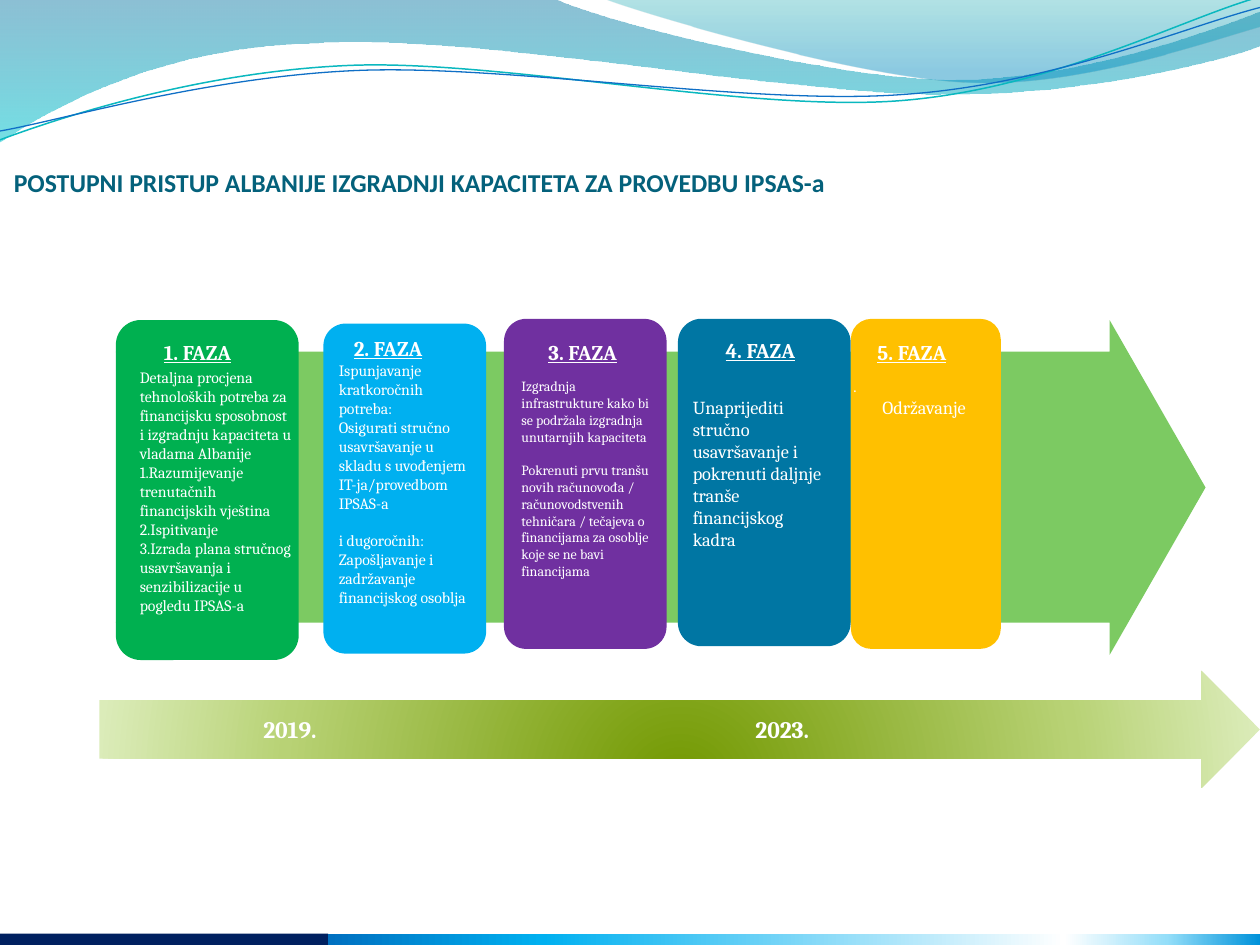
from math import cos, radians, sin

from lxml import etree
from pptx import Presentation
from pptx.dml.color import RGBColor
from pptx.enum.shapes import MSO_SHAPE
from pptx.enum.text import MSO_ANCHOR, PP_ALIGN
from pptx.oxml import parse_xml
from pptx.oxml.ns import nsdecls, qn
from pptx.util import Pt

RECTANGLE = MSO_SHAPE.RECTANGLE
ROUNDED = MSO_SHAPE.ROUNDED_RECTANGLE
RIGHT_ARROW = MSO_SHAPE.RIGHT_ARROW
LEFT, CENTER = PP_ALIGN.LEFT, PP_ALIGN.CENTER
TOP, MIDDLE, BOTTOM = MSO_ANCHOR.TOP, MSO_ANCHOR.MIDDLE, MSO_ANCHOR.BOTTOM

UNITS_PER_POINT = 100
RIBBON_TILT = 2.7
WHITE = "FFFFFF"
BODY = {"name": "Cambria", "size": Pt(9)}
HEADING = {"name": "Cambria", "size": Pt(12), "bold": True, "underline": True}
YEARS = {"name": "Cambria", "size": Pt(13.5), "bold": True}
TITLE = {"name": "Calibri", "size": Pt(14.64), "bold": True}

WAVES = [
    ([(0, 0), (316.8, -0.7), (342.7, 12.2, 478.1, 45.4, 545.8, 45.4),
      (614.2, 45.4, 689.8, 18.7, 720, 6.5), (720.7, 25.9),
      (707.8, 31.7, 626.4, 54.7, 537.1, 54), (447.8, 54, 275, 20.2, 185, 24.5),
      (92.9, 25.9, 33.1, 59.8, -0.7, 81.4)],
     [(0, "0074A1", 45), (100, "00C6CF", 55)]),
    ([(344.9, -0.7), (366.5, 7.9, 491, 44.6, 553.7, 46.8),
      (616.3, 49.7, 691.9, 23, 720, 15.1), (720, 0)],
     [(0, "00A1A9", 30), (80, "008BBF", 45)]),
]
RIBBONS = [
    ([(0, 79.9), (34.6, 67, 113.8, 41, 199.4, 37.4),
      (284.4, 33.8, 427, 64.1, 513.4, 57.6),
      (599.8, 51.1, 675.4, 10.8, 718.6, -1.4)], (359.3, 41.4), "0AB8BF", 0.85),
    ([(0, 74.9), (33.8, 69.1, 118.1, 43.9, 203.8, 40.3),
      (290.2, 36.7, 429.8, 60.5, 516.2, 54),
      (601.9, 48.2, 677.5, 15.1, 720, 4.3)], (359.6, 42.5), "0F6FC6", 0.75),
]
PROGRESS_ARROW = [(66.2, 201), (634.1, 201), (634.1, 182.9), (688.9, 278.6),
                  (634.1, 374.3), (634.1, 355.8), (66.2, 355.8), (87, 274.3)]

PHASES = [
    {"color": "00B050", "card": (66.2, 182.9, 104.5, 194.3),
     "heading": (91.4, 192.5, 60.5, 16.6), "body": (72.8, 206.7, 101.5, 170.6), "size": 9,
     "steps": [
         ("Detaljna procjena tehnoloških potreba za financijsku sposobnost "
          "i izgradnju kapaciteta u vladama Albanije", {}),
         ("Razumijevanje trenutačnih financijskih vještina", {"numbered": True}),
         ("Ispitivanje", {"numbered": True}),
         ("Izrada plana stručnog usavršavanja i senzibilizacije "
          "u pogledu IPSAS-a", {"numbered": True})]},
    {"color": "00B0F0", "card": (184.8, 184.9, 93, 188.6),
     "heading": (200, 190.3, 55.4, 16.6), "body": (186.5, 202.5, 87.1, 236.2), "size": 9,
     "steps": [
         ("Ispunjavanje kratkoročnih potreba:", {}),
         ("Osigurati stručno usavršavanje u skladu s uvođenjem "
          "IT-ja/provedbom IPSAS-a", {}),
         ("i dugoročnih:", {"space_before": Pt(10.8)}),
         ("Zapošljavanje i zadržavanje financijskog osoblja", {})]},
    {"color": "7030A0", "card": (288, 182.2, 92.9, 188.6),
     "heading": (311.2, 192.5, 52.6, 16.6), "body": (290.9, 212.4, 88.6, 143.3), "size": 8,
     "steps": [
         ("Izgradnja infrastrukture kako bi se podržala izgradnja "
          "unutarnjih kapaciteta", {}),
         ("Pokrenuti prvu tranšu novih računovođa / računovodstvenih tehničara "
          "/ tečajeva o financijama za osoblje koje se ne bavi financijama",
          {"space_before": Pt(9.6)})]},
    {"color": "0076A3", "card": (387.4, 182.2, 98.7, 187.1),
     "heading": (412.4, 191.7, 55.4, 16.6), "body": (388.8, 210.2, 90.7, 136.1),
     "body_top": 16.1, "size": 10.5,
     "steps": [
         ("Unaprijediti stručno usavršavanje i pokrenuti daljnje tranše "
          "financijskog kadra", {})]},
    {"color": "FFC000", "card": (486.2, 182.2, 85.7, 188.6),
     "heading": (499.2, 192.5, 59, 16.6), "body": (480.6, 212, 95, 63.4), "size": 9,
     "steps": [
         (".", {}),
         ("Održavanje", {"alignment": CENTER, "size": 10.5})]},
]


def rgb(color):
    return RGBColor.from_string(color)


def points(box):
    return [Pt(length) for length in box]


def set_all(target, values):
    for attribute, value in values.items():
        setattr(target, attribute, value)


def paint_solid(shape, color):
    shape.fill.solid()
    shape.fill.fore_color.rgb = rgb(color)


def paint_gradient(shape, stops, direction):
    properties = shape._element.spPr
    shape.fill.background()
    gradient = parse_xml(f'<a:gradFill {nsdecls("a")} rotWithShape="1"><a:gsLst/>'
                         f'{direction}</a:gradFill>')
    for position, color, opacity in stops:
        stop = etree.SubElement(gradient[0], qn("a:gs"), pos=str(position * 1000))
        tint = etree.SubElement(stop, qn("a:srgbClr"), val=color)
        if opacity < 100:
            etree.SubElement(tint, qn("a:alpha"), val=str(opacity * 1000))
    properties.replace(properties.find(qn("a:noFill")), gradient)


def linear(degrees):
    return f'<a:lin ang="{degrees * 60000}" scaled="0"/>'


def pairs(step):
    return list(zip(step[::2], step[1::2]))


def turn(step, center, degrees):
    angle = radians(degrees)
    turned = []
    for x, y in pairs(step):
        dx, dy = x - center[0], y - center[1]
        turned += [center[0] + dx * cos(angle) - dy * sin(angle),
                   center[1] + dx * sin(angle) + dy * cos(angle)]
    return turned


def add_outline(slide, steps, close=True):
    start, *corners = [(round(x * UNITS_PER_POINT), round(y * UNITS_PER_POINT))
                       for step in steps for x, y in pairs(step)]
    builder = slide.shapes.build_freeform(*start, scale=Pt(1) / UNITS_PER_POINT)
    builder.add_line_segments(corners, close=close)
    outline = builder.convert_to_shape()
    segments = iter(list(outline._element.iter(qn("a:lnTo"))))
    for step in steps[1:]:
        segment = next(segments)
        if len(step) == 6:
            segment.tag = qn("a:cubicBezTo")
            for control in (next(segments), next(segments)):
                segment.append(control[0])
                control.getparent().remove(control)
    outline.shadow.inherit = False
    outline.line.fill.background()
    return outline


def add_block(slide, kind, box):
    block = slide.shapes.add_shape(kind, *points(box))
    block.shadow.inherit = False
    block.line.fill.background()
    return block


def write(paragraph, text, font, color):
    run = paragraph.add_run()
    run.text = text
    set_all(run.font, font)
    run.font.color.rgb = rgb(color)


def add_label(slide, box, insets, anchor=TOP):
    frame = slide.shapes.add_textbox(*points(box)).text_frame
    sides = ("margin_left", "margin_top", "margin_right", "margin_bottom")
    set_all(frame, dict(zip(sides, points(insets)), word_wrap=True, vertical_anchor=anchor))
    return frame


def number(paragraph):
    properties = paragraph._p.get_or_add_pPr()
    properties.set("marL", "0")
    properties.set("indent", str(-Pt(13.7)))
    etree.SubElement(properties, qn("a:buAutoNum"), type="arabicPeriod")


def add_backdrop(slide):
    for steps, stops in WAVES:
        paint_gradient(add_outline(slide, steps), stops, linear(90))
    for steps, center, color, width in RIBBONS:
        level = [turn(step, center, RIBBON_TILT) for step in steps]
        ribbon = add_outline(slide, level, close=False)
        ribbon.rotation = 360 - RIBBON_TILT
        ribbon.fill.background()
        ribbon.line.color.rgb = rgb(color)
        ribbon.line.width = Pt(width)
    paint_solid(add_block(slide, RECTANGLE, (0, 533.5, 187.6, 6.5)), "002060")
    paint_gradient(add_block(slide, RECTANGLE, (187.6, 533.5, 532.4, 6.5)),
                   [(0, "0092DA", 100), (10, "94DEF9", 100), (21, WHITE, 100),
                    (77, "00B0F0", 100), (100, "0070C0", 100)], linear(180))


def add_phase(slide, order, phase):
    card = add_block(slide, ROUNDED, phase["card"])
    card.adjustments[0] = 0.136
    paint_solid(card, phase["color"])
    heading = add_label(slide, phase["heading"], (2.2, 1.4, 2.2, 1.4))
    write(heading.paragraphs[0], f"{order}. FAZA", HEADING, WHITE)
    body = add_label(slide, phase["body"], (7.2, phase.get("body_top", 3.6), 7.2, 3.6))
    for index, (text, options) in enumerate(phase["steps"]):
        paragraph = body.add_paragraph() if index else body.paragraphs[0]
        layout = dict(options)
        size = layout.pop("size", phase["size"])
        if layout.pop("numbered", False):
            number(paragraph)
        set_all(paragraph, layout)
        write(paragraph, text, {**BODY, "size": Pt(size)}, WHITE)


def add_timeline(slide):
    timeline = add_block(slide, RIGHT_ARROW, (56.8, 383.4, 663.2, 66.9))
    paint_gradient(timeline, [(0, "729800", 100), (68, "B8D275", 100), (100, "DBECB9", 100)],
                   '<a:path path="circle"><a:fillToRect l="50000" t="130000" '
                   'r="50000" b="-30000"/></a:path>')
    timeline.text_frame.vertical_anchor = MIDDLE
    paragraph = timeline.text_frame.paragraphs[0]
    paragraph.alignment = LEFT
    tabs = etree.SubElement(paragraph._p.get_or_add_pPr(), qn("a:tabLst"))
    for position in (86.6, 367.8):
        etree.SubElement(tabs, qn("a:tab"), pos=str(Pt(position)), algn="l")
    write(paragraph, "\t2019.\t2023.", YEARS, WHITE)


def main():
    deck = Presentation()
    set_all(deck, {"slide_width": Pt(720), "slide_height": Pt(540)})
    slide = deck.slides.add_slide(deck.slide_layouts[6])
    add_backdrop(slide)
    title = add_label(slide, (7.9, 104.4, 620.6, 25.9), (0, 0, 0, 17.6), BOTTOM)
    write(title.paragraphs[0],
          "POSTUPNI PRISTUP ALBANIJE IZGRADNJI KAPACITETA ZA PROVEDBU IPSAS-a",
          TITLE, "04617B")
    paint_solid(add_outline(slide, PROGRESS_ARROW), "7CCA62")
    for order, phase in enumerate(PHASES, 1):
        add_phase(slide, order, phase)
    add_timeline(slide)
    deck.save("out.pptx")


if __name__ == "__main__":
    main()
